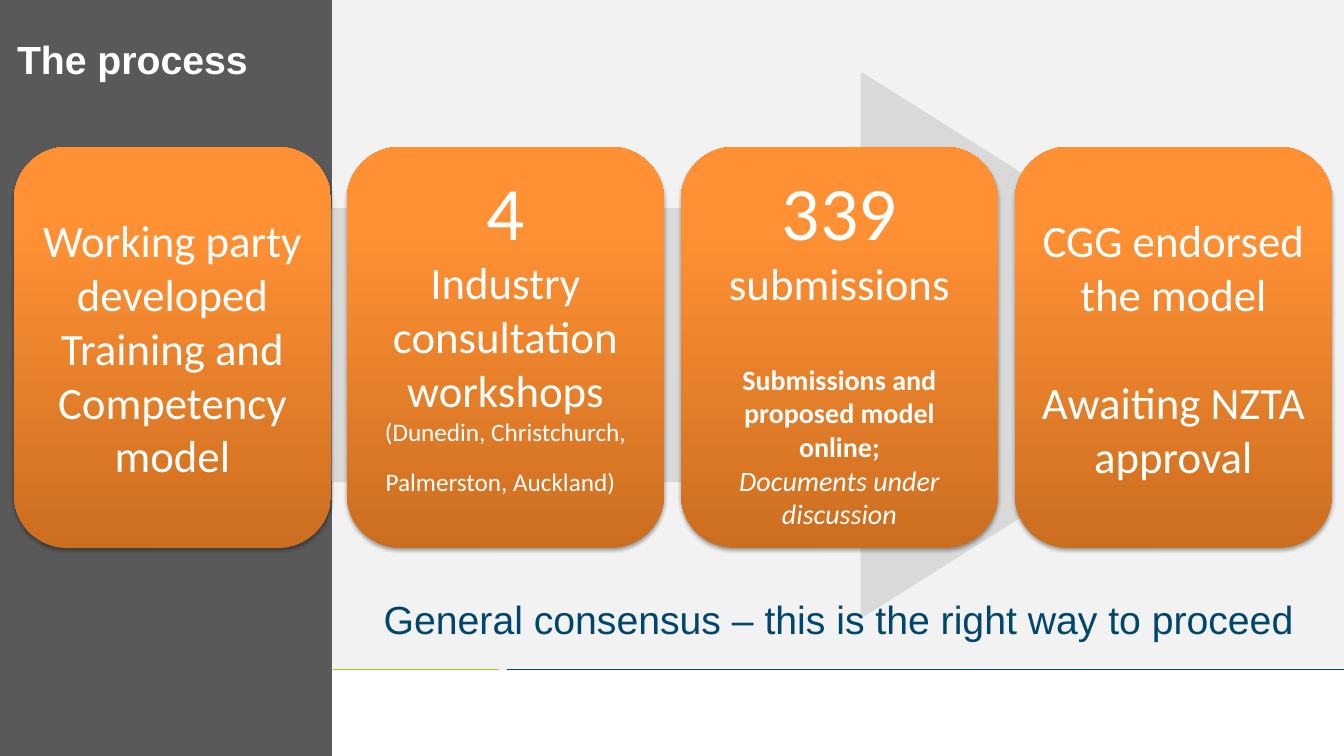
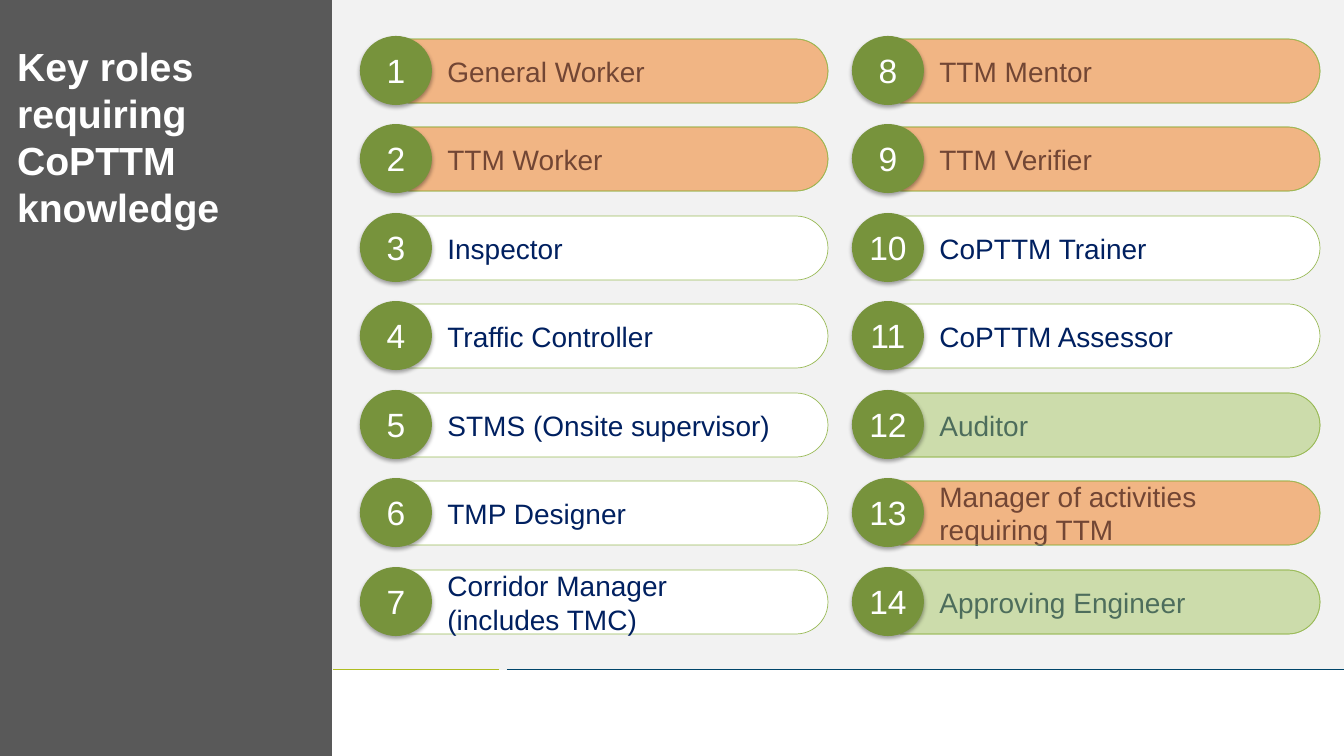
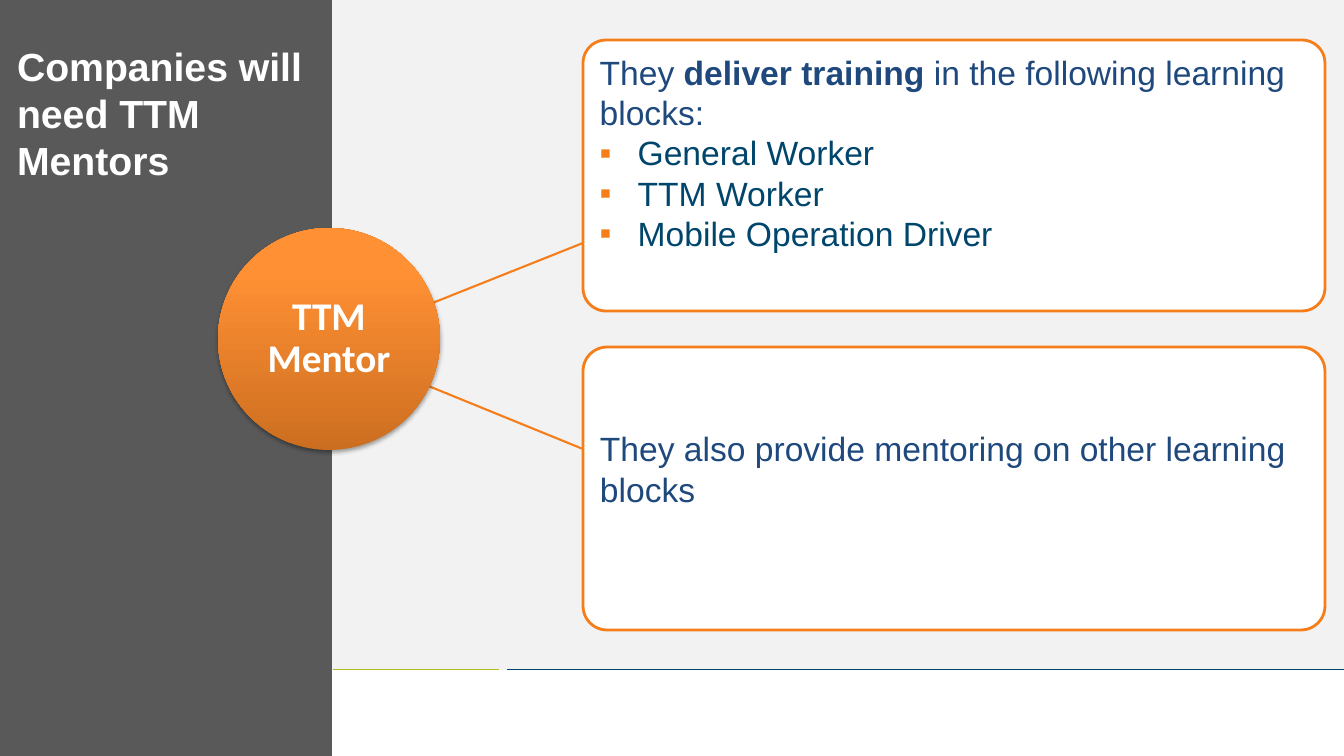
import pptx
import pptx.util
import pptx.dml.color
import pptx.enum.shapes
import pptx.enum.text
import pptx.oxml
import pptx.oxml.ns
import lxml.etree

qn = pptx.oxml.ns.qn
Pt = pptx.util.Pt
SHAPE = pptx.enum.shapes.MSO_SHAPE
ALIGN = pptx.enum.text.PP_ALIGN
ANCHOR = pptx.enum.text.MSO_ANCHOR

EMU_PER_PX = 914400 / 100.8
WIDTH, HEIGHT = 1344, 756
SIDEBAR_W, BAND_H = 333, 670

COLORS = {
    "white": "FFFFFF", "panel": "F2F2F2", "sidebar": "595959",
    "lime": "AFBD21", "teal": "00456A", "teal_text": "00456B",
    "arrow": "D9D9D9", "orange": "F57E1B",
    "grad_dark": "CC6E20", "grad_light": "FF9034",
    "pill_line": "9BBB59", "badge": "77933C", "navy": "002060",
    "tint_orange": "E46C0A", "tint_green": "9BBB59", "blue": "1F497D",
}


def px(n):
    return pptx.util.Emu(round(n * EMU_PER_PX))


def rgb(name):
    return pptx.dml.color.RGBColor.from_string(COLORS[name])


def add_shape(slide, kind, box, fill=None, line=None, line_pt=1, adj=()):
    sp = slide.shapes.add_shape(kind, *map(px, box))
    sp.shadow.inherit = False
    for i, value in enumerate(adj):
        sp.adjustments[i] = value
    if fill:
        sp.fill.solid()
        sp.fill.fore_color.rgb = rgb(fill)
    if line:
        sp.line.color.rgb = rgb(line)
        sp.line.width = Pt(line_pt)
    else:
        sp.line.fill.background()
    return sp


def add_line(slide, start, end, color, width):
    cn = slide.shapes.add_connector(
        pptx.enum.shapes.MSO_CONNECTOR.STRAIGHT, *map(px, start + end))
    cn.line.color.rgb = rgb(color)
    cn.line.width = Pt(width)
    lxml.etree.SubElement(cn.element.spPr, qn("a:effectLst"))
    return cn


def drop_shadow(sp):
    effects = sp.element.spPr.find(qn("a:effectLst"))
    shadow = lxml.etree.SubElement(
        effects, qn("a:outerShdw"), blurRad=str(Pt(3.1)), dist=str(Pt(1.8)),
        dir="5400000", rotWithShape="0")
    black = lxml.etree.SubElement(shadow, qn("a:srgbClr"), val="000000")
    lxml.etree.SubElement(black, qn("a:alpha"), val="35000")


def orange_gradient(sp):
    sp.fill.gradient()
    sp.fill.gradient_angle = 90
    for stop, name, position in zip(
            sp.fill.gradient_stops, ("grad_dark", "grad_light"), (0, 0.8)):
        stop.color.rgb = rgb(name)
        stop.position = position


def set_transparency(sp, opacity):
    color = sp.element.spPr.find(qn("a:solidFill"))[0]
    lxml.etree.SubElement(color, qn("a:alpha"), val=str(opacity * 1000))


def set_frame(sp, anchor=ANCHOR.MIDDLE, **margins):
    """Wrap the text; margins are px by side, the others keep the default."""
    tf = sp.text_frame
    tf.word_wrap = True
    tf.vertical_anchor = anchor
    for side, value in margins.items():
        setattr(tf, "margin_" + side, px(value))
    return tf


def format_font(font, size, color, name="Arial", bold=False, italic=False):
    font.size = Pt(size)
    font.name = name
    font.bold = bold
    font.italic = italic
    font.color.rgb = rgb(color)


def write(p, text, size, color, align=ALIGN.LEFT, **style):
    p.text = text
    p.alignment = align
    for r in p.runs:
        format_font(r.font, size, color, **style)


def add_run(p, text, size, color, **style):
    r = p.add_run()
    r.text = text
    format_font(r.font, size, color, **style)


def next_paragraph(tf, index):
    return tf.add_paragraph() if index else tf.paragraphs[0]


def square_bullet(p, color, indent):
    pPr = p._p.get_or_add_pPr()
    pPr.set("marL", str(px(indent)))
    pPr.set("indent", str(-px(indent)))
    bullet_color = lxml.etree.SubElement(pPr, qn("a:buClr"))
    lxml.etree.SubElement(bullet_color, qn("a:srgbClr"), val=COLORS[color])
    lxml.etree.SubElement(pPr, qn("a:buFont"), typeface="Arial")
    lxml.etree.SubElement(pPr, qn("a:buChar"), char="▪")


def dress_layout(layout, slide):
    """Draw the shared bands on a slide, then move them into its layout."""
    bands = [
        add_shape(slide, SHAPE.RECTANGLE, (302, 0, WIDTH - 302, BAND_H), "panel"),
        add_shape(slide, SHAPE.RECTANGLE, (0, 0, 332, HEIGHT), "sidebar"),
        add_line(slide, (SIDEBAR_W, BAND_H), (499, BAND_H), "lime", 0.75),
        add_line(slide, (507, BAND_H), (WIDTH, BAND_H), "teal", 0.75),
    ]
    for i, band in enumerate(bands):
        layout.shapes.element.insert(2 + i, band.element)


def add_titled_slide(prs, layout, title, top=37):
    slide = prs.slides.add_slide(layout)
    sp = slide.shapes.title
    sp.left, sp.top, sp.width, sp.height = map(px, (7, top, 319, 636))
    tf = set_frame(sp, ANCHOR.TOP)
    tf.auto_size = pptx.enum.text.MSO_AUTO_SIZE.NONE
    write(tf.paragraphs[0], title, 28, "white", bold=True)
    return slide


def process_card(slide, box, lines, bottom=5):
    """Each line is text, size, space before and font style."""
    sp = add_shape(slide, SHAPE.ROUNDED_RECTANGLE, box)
    orange_gradient(sp)
    drop_shadow(sp)
    tf = set_frame(sp, bottom=bottom)
    for i, (text, size, before, style) in enumerate(lines):
        p = next_paragraph(tf, i)
        write(p, text, size, "white", ALIGN.CENTER, name="Calibri", **style)
        if before:
            p.space_before = Pt(before)
    return tf


def process_slide(slide):
    add_shape(slide, SHAPE.RIGHT_ARROW, (SIDEBAR_W, 74, 959, 542),
              "arrow", "arrow", 2, adj=(0.5, 0.793))
    cards = [
        [("Working party developed Training and Competency model", 32, 0, {})],
        [("4", 54, 0, {}),
         ("Industry consultation workshops", 32, 0, {}),
         ("(Dunedin, Christchurch, Palmerston, Auckland)", 18, 0, {})],
        [("339", 54, 0, {}),
         ("submissions", 32, 0, {}),
         ("Submissions and proposed model online;", 20, 38, {"bold": True}),
         ("Documents under discussion", 20, 0, {"italic": True})],
        [("CGG endorsed the model", 32, 0, {}),
         ("Awaiting NZTA approval", 32, 39, {})],
    ]
    for i, lines in enumerate(cards):
        box = (14 + i * 1001 // 3, 147, 317, 401)
        tf = process_card(slide, box, lines, bottom=35 if i == 1 else 5)
        if i == 1:
            # The larger closing space sets the height of the last line.
            add_run(tf.paragraphs[-1], " ", 32, "white", name="Calibri")
    tb = slide.shapes.add_textbox(
        *map(px, (SIDEBAR_W, 590, WIDTH - SIDEBAR_W, 57)))
    tf = set_frame(tb, ANCHOR.TOP)
    write(tf.paragraphs[0], "General consensus – this is the right way to proceed",
          28, "teal_text", ALIGN.CENTER)


def role_pill(slide, x, y, number, label, tint):
    box = (x + 18, y, 450, 64)
    outline = {"line": "pill_line", "line_pt": 0.5, "adj": (0.5,)}
    sp = add_shape(slide, SHAPE.ROUNDED_RECTANGLE, box, "white", **outline)
    tf = set_frame(sp, left=60, right=0, top=0, bottom=0)
    write(tf.paragraphs[0], label, 20, "navy")
    if tint:
        veil = add_shape(slide, SHAPE.ROUNDED_RECTANGLE, box, tint, **outline)
        set_transparency(veil, 50)
    badge = add_shape(slide, SHAPE.OVAL, (x, y - 3, 72, 69), "badge")
    drop_shadow(badge)
    tf = set_frame(badge, left=0, right=0, top=0, bottom=0)
    write(tf.paragraphs[0], str(number), 24, "white", ALIGN.CENTER)


def roles_slide(slide):
    orange, green = "tint_orange", "tint_green"
    roles = [
        ("General Worker", orange), ("TTM Worker", orange),
        ("Inspector", None), ("Traffic Controller", None),
        ("STMS (Onsite supervisor)", None), ("TMP Designer", None),
        ("Corridor Manager\v(includes TMC)", None),
        ("TTM Mentor", orange), ("TTM Verifier", orange),
        ("CoPTTM Trainer", None), ("CoPTTM Assessor", None),
        ("Auditor", green), ("Manager of activities\vrequiring TTM", orange),
        ("Approving Engineer", green),
    ]
    rows = 7
    for i, (label, tint) in enumerate(roles):
        column, row = divmod(i, rows)
        role_pill(slide, 360 + column * 492, 39 + row * 531 // 6,
                  i + 1, label, tint)


def mentor_circle(slide, box):
    sp = add_shape(slide, SHAPE.OVAL, box)
    orange_gradient(sp)
    drop_shadow(sp)
    tf = set_frame(sp, left=1, right=1, top=1, bottom=1)
    p = tf.paragraphs[0]
    write(p, "TTM Mentor", 28, "white", ALIGN.CENTER, name="Calibri", bold=True)
    p.line_spacing = 0.9


def mentor_panel(slide, y, height, anchor, bottom=5):
    sp = add_shape(slide, SHAPE.ROUNDED_RECTANGLE, (583, y, 742, height),
                   "white", "orange", 2, adj=(0.085,))
    return set_frame(sp, anchor, bottom=bottom)


def mentors_slide(slide):
    add_line(slide, (425, 306), (583, 243), "orange", 1.5)
    add_line(slide, (426, 385), (583, 449), "orange", 1.5)
    mentor_circle(slide, (218, 228, 222, 222))

    tf = mentor_panel(slide, 347, 283, ANCHOR.MIDDLE, bottom=45)
    write(tf.paragraphs[0], "They also provide mentoring on other learning blocks",
          24, "blue")

    tf = mentor_panel(slide, 40, 271, ANCHOR.TOP)
    p = tf.paragraphs[0]
    p.alignment = ALIGN.LEFT
    add_run(p, "They ", 24, "blue")
    add_run(p, "deliver training ", 24, "blue", bold=True)
    add_run(p, "in the following learning blocks:", 24, "blue")
    for block in ("General Worker", "TTM Worker", "Mobile Operation Driver"):
        p = tf.add_paragraph()
        square_bullet(p, "orange", 38)
        write(p, block, 24, "teal_text")


def main():
    prs = pptx.Presentation()
    prs.slide_width, prs.slide_height = px(WIDTH), px(HEIGHT)
    layout = prs.slide_layouts.get_by_name("Title Only")
    process = add_titled_slide(prs, layout, "The process", top=30)
    dress_layout(layout, process)
    process_slide(process)
    roles_slide(add_titled_slide(prs, layout, "Key roles requiring CoPTTM knowledge"))
    mentors_slide(add_titled_slide(prs, layout, "Companies will need TTM Mentors"))
    prs.save("out.pptx")


if __name__ == "__main__":
    main()
